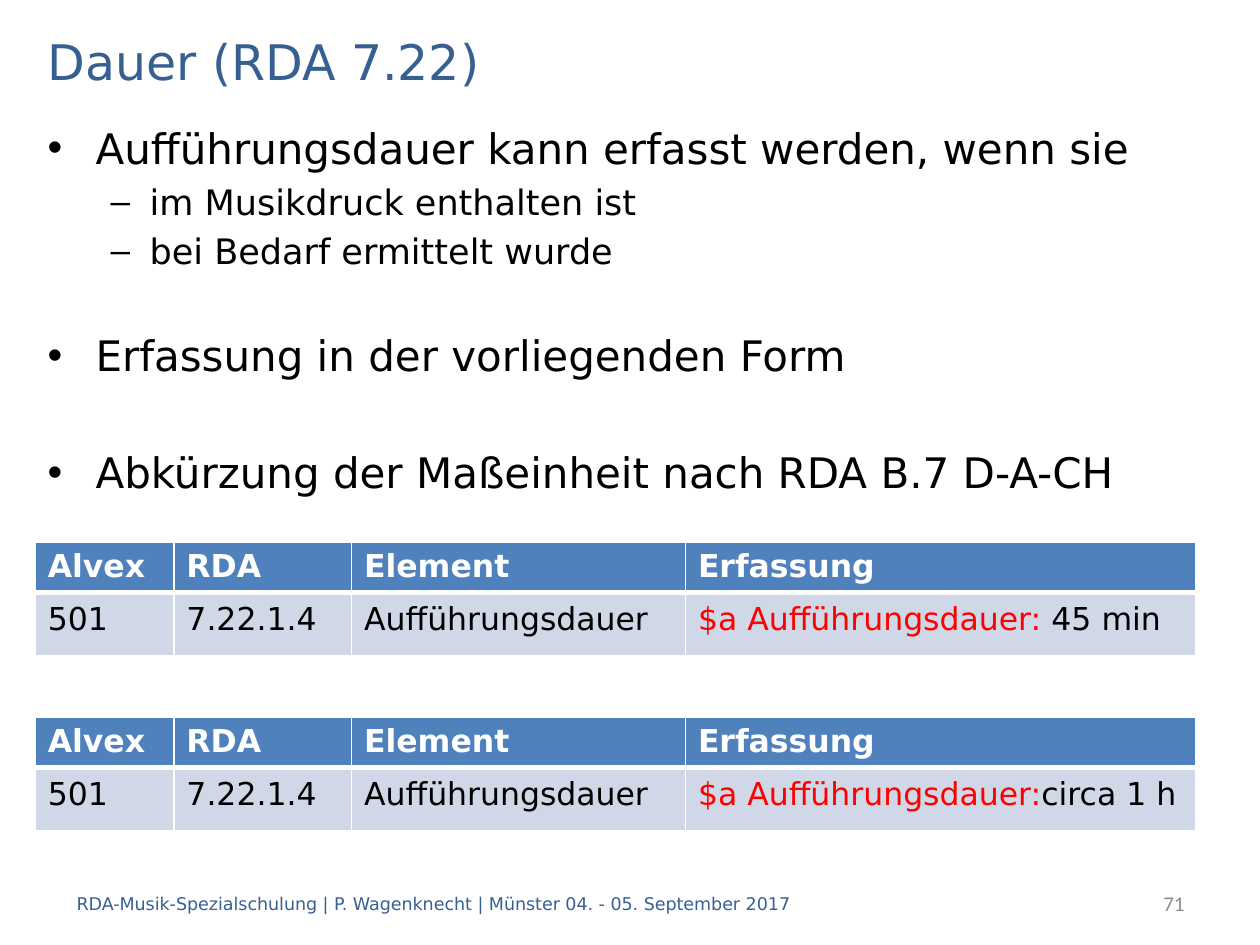
from dataclasses import dataclass

import pptx
import pptx.dml.color
import pptx.enum.text
import pptx.oxml.ns
import pptx.util
from lxml import etree

Inches = pptx.util.Inches
Pt = pptx.util.Pt
PP_ALIGN = pptx.enum.text.PP_ALIGN
MIDDLE = pptx.enum.text.MSO_ANCHOR.MIDDLE


@dataclass(frozen=True)
class Theme:
    font: str = "DejaVu Sans"
    number_font: str = "Calibri"
    heading: str = "376092"
    text: str = "000000"
    accent: str = "FF0000"
    number: str = "8C8C8C"
    white: str = "FFFFFF"
    header_fill: str = "4F81BD"
    row_fill: str = "D0D8E8"
    title_size: int = 28
    bullet_sizes: tuple = (24, 20)
    table_size: int = 18
    footer_size: int = 10
    number_size: int = 12


THEME = Theme()
MARGIN = 0.28
COLUMN_WIDTHS = (1.1, 1.41, 2.65, 4.05)
ROW_HEIGHTS = (0.38, 0.5)
HEADERS = ("Alvex", "RDA", "Element", "Erfassung")
ROW_START = ("501", "7.22.1.4", "Aufführungsdauer")

# Text, level, space before in points
BULLETS = (
    ("Aufführungsdauer kann erfasst werden, wenn sie", 0, 5),
    ("im Musikdruck enthalten ist", 1, 4.4),
    ("bei Bedarf ermittelt wurde", 1, 4.4),
    ("Erfassung in der vorliegenden Form", 0, 33),
    ("Abkürzung der Maßeinheit nach RDA B.7 D-A-CH", 0, 38.2),
)
# Bullet sign, left margin, hanging indent
LEVELS = (("•", 0.38, -0.38), ("–", 0.81, -0.31))


def inches(box):
    return [Inches(length) for length in box]


def add_child(parent, tag, **attributes):
    return etree.SubElement(parent, pptx.oxml.ns.qn(tag), attributes)


def format_span(span, size, color, font=THEME.font, bold=False):
    span.font.name = font
    span.font.size = Pt(size)
    span.font.bold = bold
    span.font.color.rgb = pptx.dml.color.RGBColor.from_string(color)


def set_bullet(para, level):
    sign, margin, indent = LEVELS[level]
    para.level = level
    properties = para._p.get_or_add_pPr()
    properties.set("marL", str(Inches(margin)))
    properties.set("indent", str(Inches(indent)))
    add_child(properties, "a:buFont", typeface="Arial")
    add_child(properties, "a:buChar", char=sign)


def place_title(page, box, text):
    title = page.shapes.title
    title.left, title.top, title.width, title.height = inches(box)
    frame = title.text_frame
    frame.text = text
    frame.vertical_anchor = MIDDLE
    para = frame.paragraphs[0]
    para.alignment = PP_ALIGN.LEFT
    format_span(para.runs[0], THEME.title_size, THEME.heading)


def add_bullets(page, box, bullets):
    frame = page.shapes.add_textbox(*inches(box)).text_frame
    frame.word_wrap = True
    frame.text = "\n".join(text for text, _, _ in bullets)
    for para, (_, level, space) in zip(frame.paragraphs, bullets):
        para.space_before = Pt(space)
        set_bullet(para, level)
        format_span(para.runs[0], THEME.bullet_sizes[level], THEME.text)


def add_line(page, box, text, size, color, font=THEME.font, alignment=PP_ALIGN.LEFT):
    frame = page.shapes.add_textbox(*inches(box)).text_frame
    frame.word_wrap = True
    frame.vertical_anchor = MIDDLE
    frame.text = text
    para = frame.paragraphs[0]
    para.alignment = alignment
    format_span(para.runs[0], size, color, font)


def set_borders(cell, top, bottom):
    """Draw white borders; top and bottom are widths in points."""
    properties = cell._tc.get_or_add_tcPr()
    for side, width in (("L", 1), ("R", 1), ("T", top), ("B", bottom)):
        line = add_child(properties, f"a:ln{side}", w=str(Pt(width)))
        fill = add_child(line, "a:solidFill")
        add_child(fill, "a:srgbClr", val=THEME.white)


def fill_cell(cell, spans, fill, bold=False):
    """Write (text, color) spans into one table cell."""
    cell.fill.solid()
    cell.fill.fore_color.rgb = pptx.dml.color.RGBColor.from_string(fill)
    para = cell.text_frame.paragraphs[0]
    for text, color in spans:
        span = para.add_run()
        span.text = text
        format_span(span, THEME.table_size, color, bold=bold)
    return para


def add_example(page, box, label, value):
    table = page.shapes.add_table(2, len(HEADERS), *inches(box)).table
    for column, width in zip(table.columns, COLUMN_WIDTHS):
        column.width = Inches(width)
    for row, height in zip(table.rows, ROW_HEIGHTS):
        row.height = Inches(height)

    entries = [[(text, THEME.text)] for text in ROW_START]
    entries.append([(label, THEME.accent), (value, THEME.text)])
    for index, (header, spans) in enumerate(zip(HEADERS, entries)):
        head, body = table.cell(0, index), table.cell(1, index)
        set_borders(head, top=1, bottom=3)
        fill_cell(head, [(header, THEME.white)], THEME.header_fill, bold=True)
        set_borders(body, top=3, bottom=1)
        body.vertical_anchor = MIDDLE
        para = fill_cell(body, spans, THEME.row_fill)
        para.line_spacing = Pt(16)
        para.space_before = para.space_after = Pt(6)


def main():
    deck = pptx.Presentation()
    deck.slide_width, deck.slide_height = Inches(10), Inches(7.5)
    page = deck.slides.add_slide(deck.slide_layouts[5])

    place_title(page, (MARGIN, 0.2, 9.45, 0.56), "Dauer (RDA 7.22)")
    add_bullets(page, (MARGIN, 0.92, 9.45, 3.3), BULLETS)
    add_line(page, (0.51, 6.97, 7.4, 0.4),
             "RDA-Musik-Spezialschulung | P. Wagenknecht | Münster 04. - 05. September 2017",
             THEME.footer_size, THEME.heading)
    add_line(page, (7.91, 6.97, 1.59, 0.4), "71", THEME.number_size, THEME.number,
             THEME.number_font, PP_ALIGN.RIGHT)
    examples = ((4.3, "$a Aufführungsdauer: ", "45 min"),
                (5.69, "$a Aufführungsdauer:", "circa 1 h"))
    for top, label, value in examples:
        box = (MARGIN, top, sum(COLUMN_WIDTHS), sum(ROW_HEIGHTS))
        add_example(page, box, label, value)

    deck.save("out.pptx")


if __name__ == "__main__":
    main()
